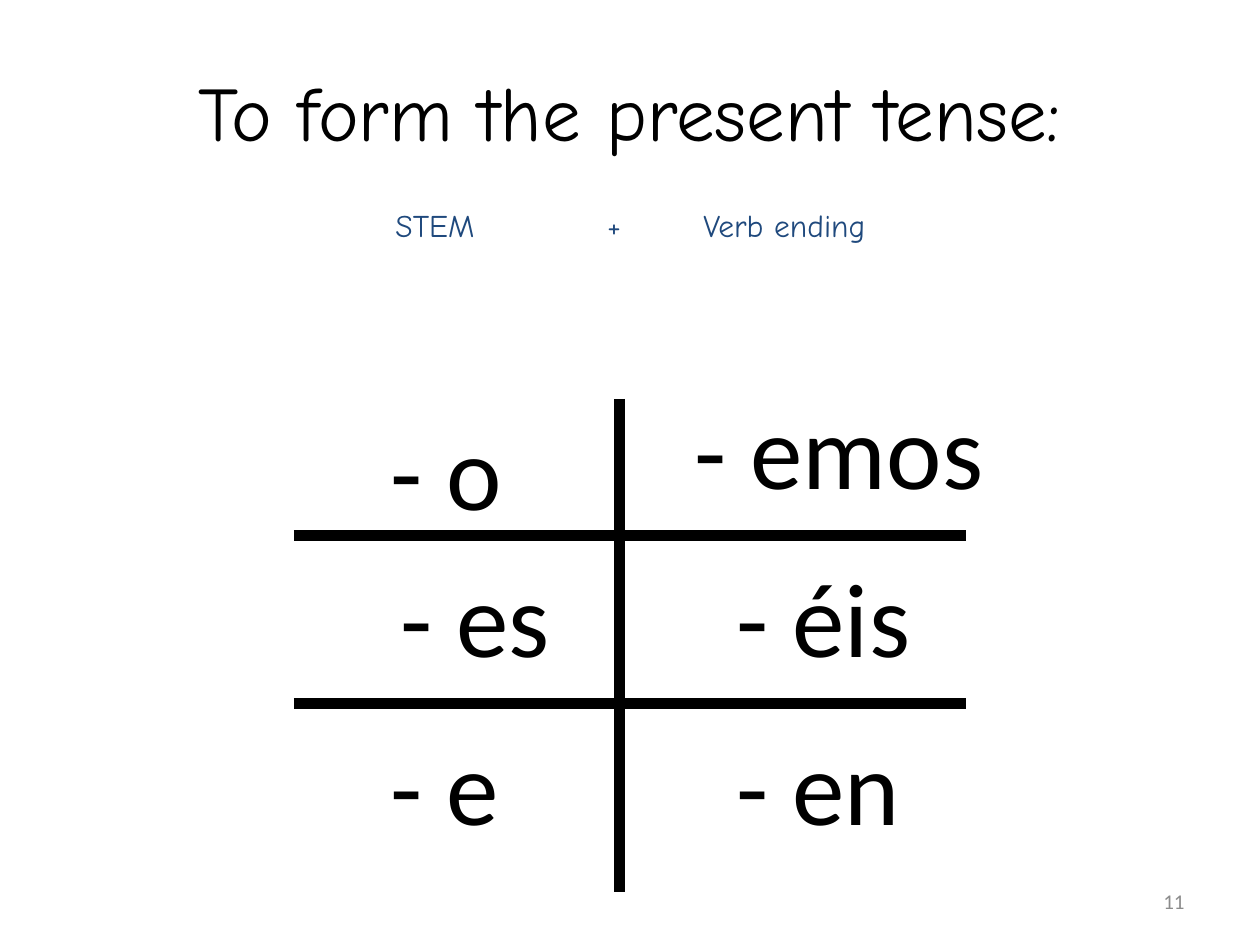
from lxml import etree
from pptx import Presentation
from pptx.dml.color import RGBColor
from pptx.enum import shapes, text
from pptx.oxml.ns import qn
from pptx.util import Pt

BLACK = RGBColor(0x00, 0x00, 0x00)
NAVY = RGBColor(0x1F, 0x49, 0x7D)
GRAY = RGBColor(0x8C, 0x8C, 0x8C)
HEADING_FONT = "Comic Neue"
BODY_FONT = "Calibri"


def format_text(shape, content, size, font, color, alignment=text.PP_ALIGN.LEFT):
    shape.text_frame.text = content
    paragraph = shape.text_frame.paragraphs[0]
    paragraph.alignment = alignment
    for run in paragraph.runs:
        run.font.size = Pt(size)
        run.font.name = font
        run.font.color.rgb = color
    return paragraph


def add_text(slide, box, *formatting):
    shape = slide.shapes.add_textbox(*map(Pt, box))
    shape.text_frame.word_wrap = True
    return shape, format_text(shape, *formatting)


def add_title(slide, box):
    title = slide.shapes.title
    title.left, title.top, title.width, title.height = map(Pt, box)
    title.text_frame.vertical_anchor = text.MSO_ANCHOR.MIDDLE
    format_text(title, "To form the present tense:", 44, HEADING_FONT, BLACK,
                text.PP_ALIGN.CENTER)


def add_formula(slide, box):
    shape, paragraph = add_text(slide, box, "STEM\t+\tVerb ending", 18,
                                HEADING_FONT, NAVY)
    shape.text_frame.margin_left = Pt(38)
    tab_list = etree.SubElement(paragraph._p.get_or_add_pPr(), qn("a:tabLst"))
    for position in (121, 176):
        etree.SubElement(tab_list, qn("a:tab"), pos=str(Pt(position)), algn="l")


def add_grid_lines(slide, box):
    left, top, width, height = box
    middle = left + 186
    lines = [(middle, top, middle, top + height)]
    lines += [(left, top + y, left + width, top + y) for y in (78, 174)]
    group = slide.shapes.add_group_shape()
    for ends in lines:
        line = group.shapes.add_connector(shapes.MSO_CONNECTOR.STRAIGHT,
                                          *map(Pt, ends))
        line.line.color.rgb = BLACK
        line.line.width = Pt(6)
        etree.SubElement(line._element.spPr, qn("a:effectLst"))


def add_endings(slide, box):
    left, top = box[:2]
    endings = [
        ("- o", 48, 0, 108),
        ("- es", 54, 84, 108),
        ("- e", 48, 180, 108),
        ("- emos", 222, -12, 228),
        ("- éis", 246, 84, 168),
        ("- en", 246, 180, 108),
    ]
    for ending, x, y, width in endings:
        add_text(slide, (left + x, top + y, width, 80), ending, 60, BODY_FONT, BLACK)


def add_slide_number(slide, box):
    shape, _ = add_text(slide, box, "11", 12, BODY_FONT, GRAY, text.PP_ALIGN.RIGHT)
    shape.text_frame.vertical_anchor = text.MSO_ANCHOR.MIDDLE


def main():
    presentation = Presentation()
    presentation.slide_width, presentation.slide_height = Pt(720), Pt(540)
    slide = presentation.slides.add_slide(presentation.slide_layouts[5])
    grid = (168, 228, 384, 282)
    add_slide_number(slide, (516, 500.5, 168, 28.75))
    add_title(slide, (54, 18, 612, 90))
    add_formula(slide, (188, 114, 346, 36))
    add_grid_lines(slide, grid)
    add_endings(slide, grid)
    presentation.save("out.pptx")


if __name__ == "__main__":
    main()
